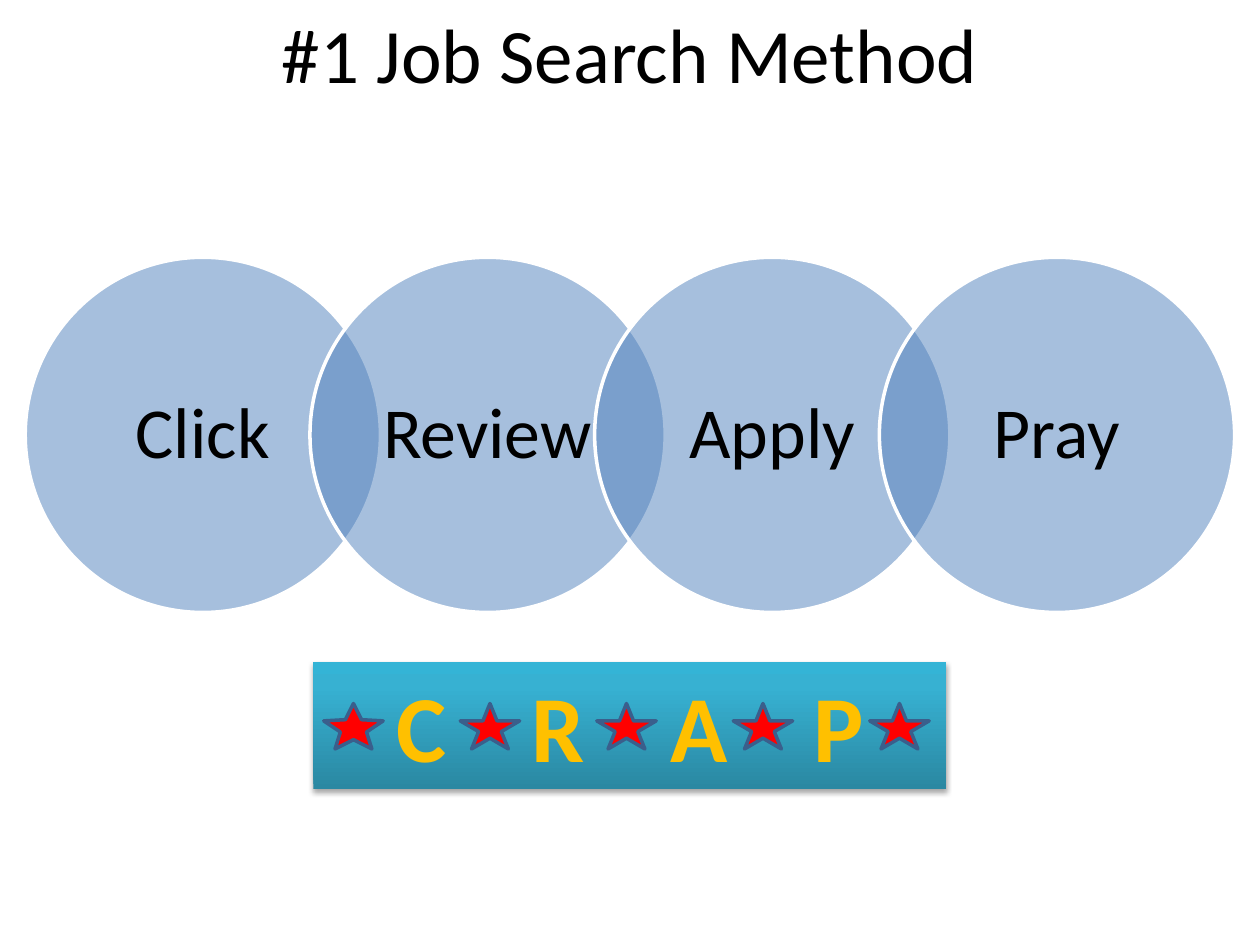
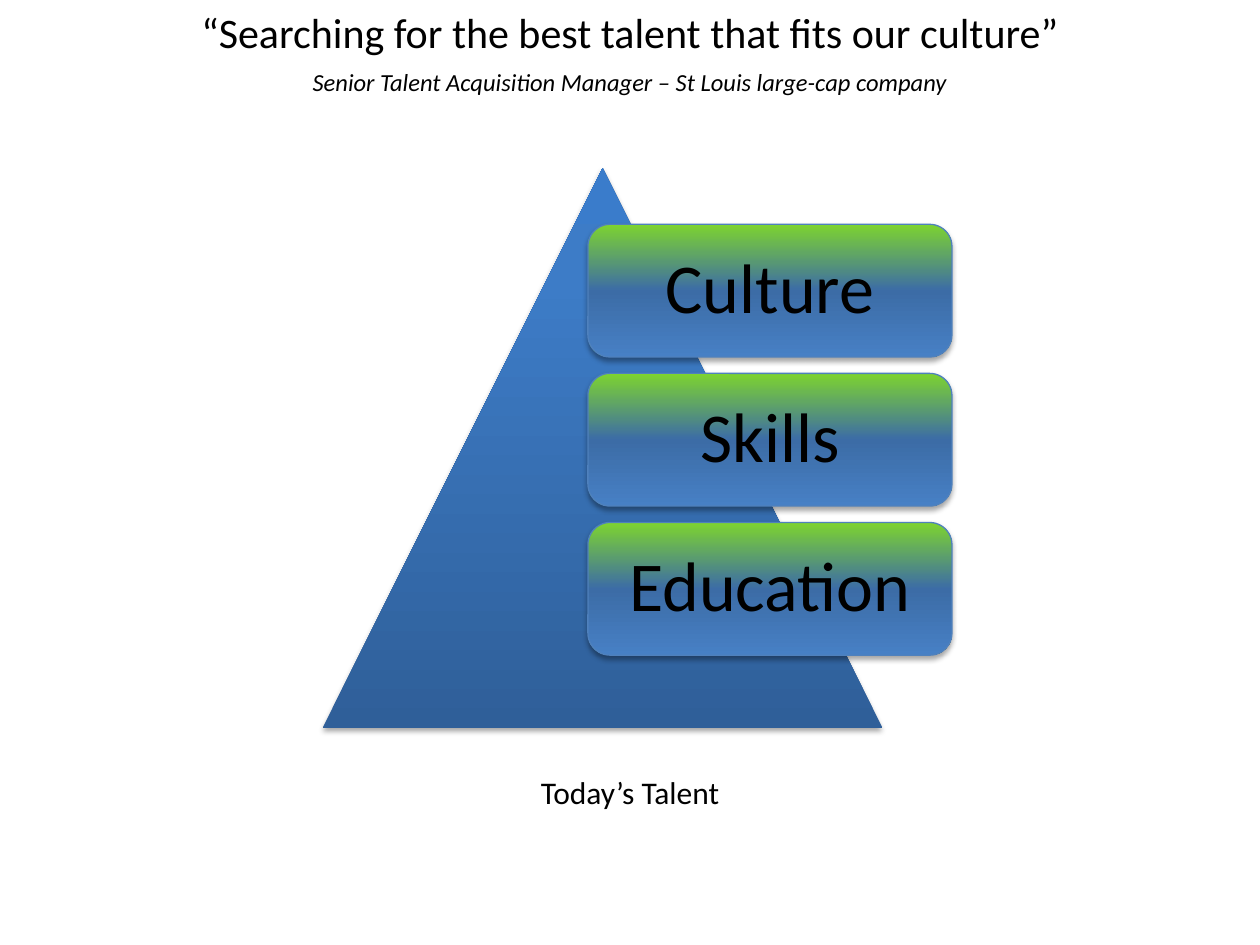
"""Build two slides: a job search method and a pyramid of today's talent."""
from lxml.etree import SubElement
from pptx import Presentation
from pptx.dml.color import RGBColor
from pptx.enum.shapes import MSO_SHAPE
from pptx.enum.text import PP_ALIGN
from pptx.oxml.ns import qn
from pptx.util import Pt

FONT = "Calibri"
BLACK, WHITE, BLUE = "000000", "FFFFFF", "4F81BD"
TITLE_BOX = [Pt(v) for v in (60, 0, 600, 60)]
BANNER_GRADIENT = [(0, "2A88A2"), (80, "37B1D2"), (100, "34B4D6")]
PYRAMID_GRADIENT = [(0, "2F5F99"), (80, "3D7CC7"), (100, "3A7CCB")]
LABEL_GRADIENT = [(0, "7DD330"), (50, "3C6CA6"), (100, "4780C5")]


def draw(s, kind, box, fill, line=None, width=0, alpha=None, angle=90, shadow=False):
    sp = s.shapes.add_shape(kind, *[Pt(v) for v in box])
    sp.shadow.inherit = False
    sp.text_frame.margin_left = sp.text_frame.margin_right = 0
    spPr = sp._element.spPr
    if isinstance(fill, list):
        sp.fill.gradient()
        sp.fill.gradient_angle = angle
        stops = spPr.find(".//" + qn("a:gsLst"))
        for stop in list(stops):
            stops.remove(stop)
        for pos, color in fill:
            stop = SubElement(stops, qn("a:gs"), pos=str(pos * 1000))
            SubElement(stop, qn("a:srgbClr"), val=color)
    else:
        sp.fill.solid()
        sp.fill.fore_color.rgb = RGBColor.from_string(fill)
        if alpha:
            color = spPr.find(".//" + qn("a:srgbClr"))
            SubElement(color, qn("a:alpha"), val=str(alpha * 1000))
    if line:
        sp.line.color.rgb = RGBColor.from_string(line)
        sp.line.width = Pt(width)
    else:
        sp.line.fill.background()
    if shadow:
        outer = SubElement(spPr.find(qn("a:effectLst")), qn("a:outerShdw"),
                           blurRad=str(Pt(3.1)), dist=str(Pt(1.8)),
                           dir="5400000", rotWithShape="0")
        color = SubElement(outer, qn("a:srgbClr"), val=BLACK)
        SubElement(color, qn("a:alpha"), val="35000")
    return sp


def write(sp, text, size, color=BLACK, bold=False, italic=False,
          align=PP_ALIGN.CENTER, spacing=None, before=None, tabs=()):
    tf = sp.text_frame
    tf.word_wrap = True
    p = tf.add_paragraph() if tf.text else tf.paragraphs[0]
    p.alignment = align
    if spacing:
        p.line_spacing = spacing
    if before:
        p.space_before = Pt(before)
    if tabs:
        tab_list = SubElement(p._p.get_or_add_pPr(), qn("a:tabLst"))
        for pos in tabs:
            SubElement(tab_list, qn("a:tab"), pos=str(Pt(pos)), algn="ctr")
    r = p.add_run()
    r.text = text
    r.font.name, r.font.size = FONT, Pt(size)
    r.font.bold, r.font.italic = bold, italic
    r.font.color.rgb = RGBColor.from_string(color)


prs = Presentation()
prs.slide_width, prs.slide_height = Pt(720), Pt(540)
blank = prs.slide_layouts[6]

s = prs.slides.add_slide(blank)
for i, step in enumerate(["Click", "Review", "Apply", "Pray"]):
    sp = draw(s, MSO_SHAPE.OVAL, (14.4 + i * 162.7, 147, 203, 203), BLUE,
              line=WHITE, width=2, alpha=50)
    write(sp, step, 41, spacing=0.9)

title = s.shapes.add_textbox(*TITLE_BOX)
write(title, "#1 Job Search Method", 44)

banner = draw(s, MSO_SHAPE.RECTANGLE, (179, 378, 361.5, 72.7), BANNER_GRADIENT,
              shadow=True)
banner.text_frame.margin_left = Pt(47.5)
write(banner, "C\tR\tA\tP", 54, color="FFC000", bold=True, align=PP_ALIGN.LEFT,
      tabs=(92.5, 173, 252.5))

for i in range(5):
    star = draw(s, MSO_SHAPE.STAR_5_POINT, (185 + i * 78, 402, 34, 26), "FF0000",
                line="3A5F8C", width=2)
    if i == 0:
        star.adjustments[0] = 0.22

s = prs.slides.add_slide(blank)
draw(s, MSO_SHAPE.ISOSCELES_TRIANGLE, (184.3, 96, 320, 320), PYRAMID_GRADIENT,
     shadow=True)
for i, quality in enumerate(["Culture", "Skills", "Education"]):
    sp = draw(s, MSO_SHAPE.ROUNDED_RECTANGLE, (336, 128.2 + i * 85.2, 208, 75.8),
              LABEL_GRADIENT, line=BLUE, width=0.75, angle=270, shadow=True)
    write(sp, quality, 40, spacing=0.9)

title = s.shapes.add_textbox(*TITLE_BOX)
write(title, "“Searching for the best talent that fits our culture”", 24)
write(title, "Senior Talent Acquisition Manager – St Louis large-cap company", 14,
      italic=True, before=6)

caption = s.shapes.add_textbox(Pt(263.5), Pt(438), Pt(193), Pt(29))
write(caption, "Today’s Talent", 18)

prs.save("out.pptx")
